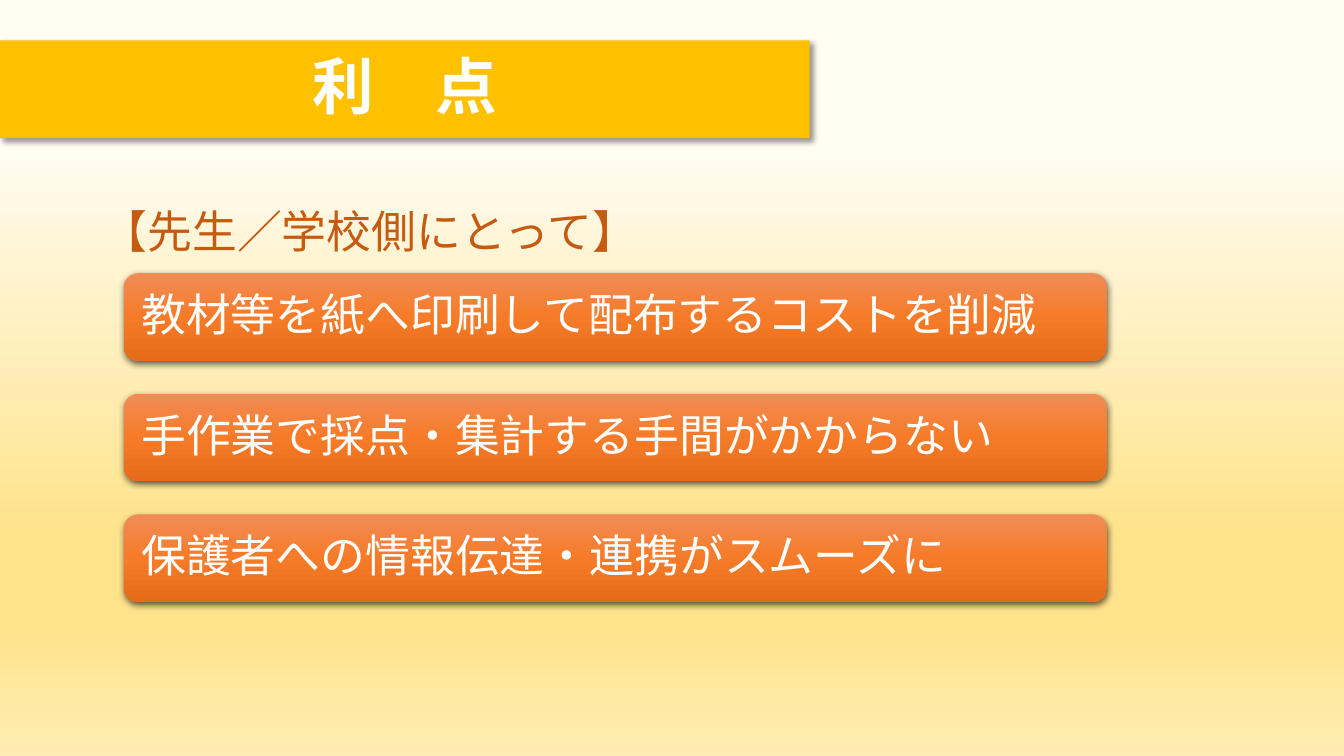
from dataclasses import dataclass

from lxml.etree import SubElement
from pptx import Presentation
from pptx.dml.color import RGBColor
from pptx.enum.shapes import MSO_SHAPE
from pptx.enum.text import MSO_ANCHOR, PP_ALIGN
from pptx.oxml.ns import qn
from pptx.util import Inches, Pt

FONT = "Noto Sans CJK JP"
COLORS = {
    "white": "FFFFFF", "gold": "FFC000", "rust": "C55A11", "black": "000000",
    "cream": "FFFCF2", "sand": "FFE38C", "pale": "FFECB2",
    "peach": "F18C57", "orange": "F67B28", "ember": "E56C19",
}
BACK = [(19, "cream"), (70, "sand"), (83, "sand"), (100, "pale")]
GLOW = [(0, "peach"), (50, "orange"), (100, "ember")]


@dataclass
class Box:
    """Place and size in percent of the slide."""
    left: float
    top: float
    width: float
    height: float


@dataclass
class Shade:
    """Outer shadow: percent, points, points, degrees."""
    alpha: int
    blur: float
    dist: float
    angle: int


deck = Presentation()
deck.slide_width, deck.slide_height = Inches(13.33), Inches(7.5)
slide = deck.slides.add_slide(deck.slide_layouts[6])


def place(box: Box) -> list[int]:
    wide, high = deck.slide_width, deck.slide_height
    return [int(part * full / 100) for part, full in (
        (box.left, wide), (box.top, high), (box.width, wide), (box.height, high))]


def apply(target, form: dict) -> None:
    for name, value in form.items():
        setattr(target, name, value)


def blend(fill, root, stops: list) -> None:
    """Fill from top to bottom with the given colour stops."""
    fill.gradient()
    fill.gradient_angle = 270
    held = next(root.iter(qn("a:gsLst")))
    for old in list(held):
        held.remove(old)
    for share, color in stops:
        stop = SubElement(held, qn("a:gs"), pos=str(share * 1000))
        SubElement(stop, qn("a:srgbClr"), val=COLORS[color])


def cast(shape, shade: Shade) -> None:
    shape.shadow.inherit = False
    held = next(shape.element.iter(qn("a:effectLst")))
    drop = SubElement(held, qn("a:outerShdw"), blurRad=str(Pt(shade.blur)),
                      dist=str(Pt(shade.dist)), dir=str(shade.angle * 60000),
                      algn="ctr", rotWithShape="0")
    tone = SubElement(drop, qn("a:srgbClr"), val=COLORS["black"])
    SubElement(tone, qn("a:alpha"), val=str(shade.alpha * 1000))


def write(shape, text: str, color: str, frame: dict, para: dict, font: dict) -> None:
    apply(shape.text_frame, {"word_wrap": True, **frame})
    line = shape.text_frame.paragraphs[0]
    apply(line, {"alignment": PP_ALIGN.LEFT, "line_spacing": 0.9, **para})
    run = line.add_run()
    run.text = text
    apply(run.font, {"name": FONT, "size": Pt(32), **font})
    run.font.color.rgb = RGBColor.from_string(COLORS[color])
    SubElement(run.font._element, qn("a:ea"), typeface=FONT)


def panel(kind: MSO_SHAPE, box: Box, shade: Shade):
    shape = slide.shapes.add_shape(kind, *place(box))
    shape.line.fill.background()
    cast(shape, shade)
    return shape


# Background
blend(slide.background.fill, slide.element, BACK)

# Heading above the list
head = slide.shapes.add_textbox(*place(Box(6.9, 27.07, 88.22, 67.6)))
write(head, "【先生／学校側にとって】", "rust", {}, {"space_before": Pt(10)}, {})

# Title banner
title = panel(MSO_SHAPE.PENTAGON, Box(0, 5.33, 60.24, 12.93), Shade(40, 4, 3, 45))
title.adjustments[0] = 0
title.fill.solid()
title.fill.fore_color.rgb = RGBColor.from_string(COLORS["gold"])
write(title, "利　点", "white", {"vertical_anchor": MSO_ANCHOR.MIDDLE},
      {"alignment": PP_ALIGN.CENTER}, {"size": Pt(44), "bold": True})

# Benefit bars at equal steps
POINTS = [
    "教材等を紙へ印刷して配布するコストを削減",
    "手作業で採点・集計する手間がかからない",
    "保護者への情報伝達・連携がスムーズに",
]
SIDES = ("margin_left", "margin_top", "margin_right", "margin_bottom")
INSET = {side: Inches(0.13) for side in SIDES}
for row, point in enumerate(POINTS):
    bar = panel(MSO_SHAPE.ROUNDED_RECTANGLE,
                Box(9.23, 36.13 + 15.95 * row, 73.14, 11.6), Shade(63, 4.5, 1.5, 90))
    blend(bar.fill, bar.element, GLOW)
    write(bar, point, "white", {"vertical_anchor": MSO_ANCHOR.MIDDLE, **INSET}, {}, {})

deck.save("out.pptx")
